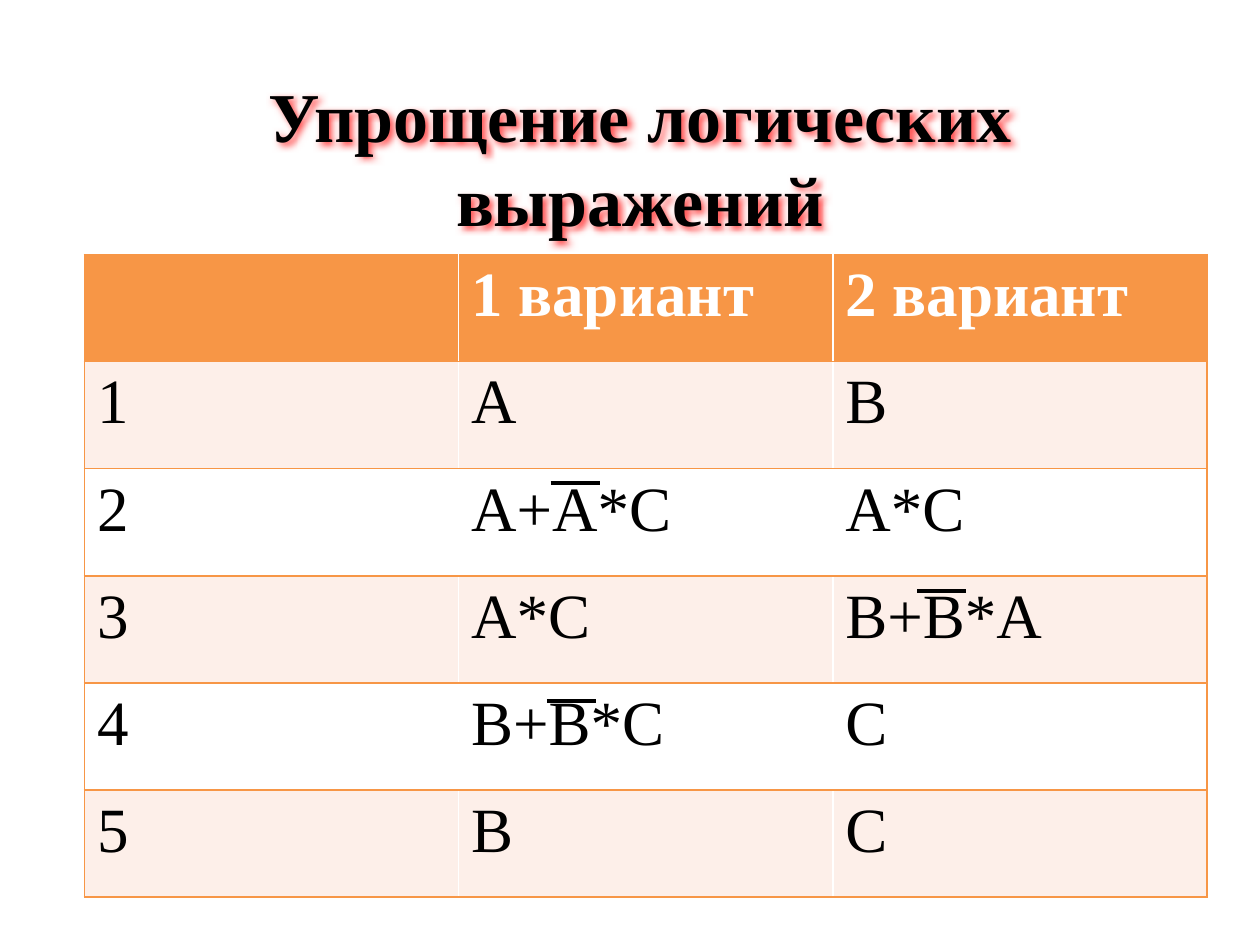
from lxml import etree
from pptx import Presentation
from pptx.dml.color import RGBColor
from pptx.enum.shapes import MSO_CONNECTOR
from pptx.enum.text import MSO_ANCHOR, PP_ALIGN
from pptx.oxml.ns import qn
from pptx.util import Inches, Pt

STRAIGHT = MSO_CONNECTOR.STRAIGHT
MIDDLE = MSO_ANCHOR.MIDDLE
CENTER = PP_ALIGN.CENTER

BLACK = RGBColor(0x00, 0x00, 0x00)
WHITE = RGBColor(0xFF, 0xFF, 0xFF)
ORANGE = RGBColor(0xF7, 0x96, 0x46)
PALE_ORANGE = RGBColor(0xFD, 0xEF, 0xE9)
SHADOW_RED = RGBColor(0xFF, 0x50, 0x50)
FONT = "Times New Roman"

ROWS = [
    ("", "1 вариант", "2 вариант"),
    ("1", "А", "В"),
    ("2", "А+А*С", "А*С"),
    ("3", "А*С", "В+В*А"),
    ("4", "В+В*С", "С"),
    ("5", "В", "С"),
]
COLUMN_WIDTH = 2.97
ROW_HEIGHT = 0.85
# Left end and height of each negation bar
NEGATION_BARS = [(4.37, 3.83), (4.34, 5.56), (7.28, 4.69)]
BAR_LENGTH = 0.39


def format_runs(paragraph, size, color, bold):
    for run in paragraph.runs:
        run.font.name = FONT
        run.font.size = Pt(size)
        run.font.bold = bold
        run.font.color.rgb = color


def add_color(parent, color):
    fill = etree.SubElement(parent, qn("a:solidFill"))
    return etree.SubElement(fill, qn("a:srgbClr"), val=str(color))


def add_title(slide, text):
    title = slide.shapes.add_textbox(
        Inches(0.83), Inches(0.44), Inches(8.5), Inches(1.61))
    frame = title.text_frame
    frame.word_wrap = True
    frame.vertical_anchor = MIDDLE
    frame.text = text
    frame.paragraphs[0].alignment = CENTER
    format_runs(frame.paragraphs[0], 40, BLACK, True)

    # Soft red shadow behind the letters
    effects = etree.SubElement(title._element.spPr, qn("a:effectLst"))
    shadow = etree.SubElement(
        effects, qn("a:outerShdw"), blurRad=str(Pt(4)), dist=str(Pt(2)),
        dir="2700000", algn="tl", rotWithShape="0")
    etree.SubElement(shadow, qn("a:srgbClr"), val=str(SHADOW_RED))


def add_border(cell, side):
    properties = cell._tc.get_or_add_tcPr()
    line = etree.SubElement(properties, qn(f"a:ln{side}"), w=str(Pt(1)))
    add_color(line, ORANGE)


def add_answer_table(slide):
    row_count, column_count = len(ROWS), len(ROWS[0])
    table = slide.shapes.add_table(
        row_count, column_count, Inches(0.67), Inches(2.02),
        Inches(COLUMN_WIDTH * column_count),
        Inches(ROW_HEIGHT * row_count)).table
    for column in table.columns:
        column.width = Inches(COLUMN_WIDTH)
    for row_index, texts in enumerate(ROWS):
        table.rows[row_index].height = Inches(ROW_HEIGHT)
        is_header = row_index == 0
        band = PALE_ORANGE if row_index % 2 else WHITE
        for column_index, text in enumerate(texts):
            cell = table.cell(row_index, column_index)
            # Outer edges and row rules only, without inner verticals
            if column_index == 0:
                add_border(cell, "L")
            if column_index == column_count - 1:
                add_border(cell, "R")
            add_border(cell, "T")
            add_border(cell, "B")
            cell.fill.solid()
            cell.fill.fore_color.rgb = ORANGE if is_header else band
            cell.text = text
            format_runs(cell.text_frame.paragraphs[0], 36,
                        WHITE if is_header else BLACK, is_header)


def add_negation_bar(slide, left, top):
    bar = slide.shapes.add_connector(
        STRAIGHT, Inches(left), Inches(top),
        Inches(left + BAR_LENGTH), Inches(top))
    bar.line.color.rgb = BLACK
    bar.line.width = Pt(2.25)
    etree.SubElement(bar._element.spPr, qn("a:effectLst"))


def main():
    presentation = Presentation()
    presentation.slide_width = Inches(10)
    presentation.slide_height = Inches(7.5)
    slide = presentation.slides.add_slide(presentation.slide_layouts[6])
    add_title(slide, "Упрощение логических выражений")
    add_answer_table(slide)
    for left, top in NEGATION_BARS:
        add_negation_bar(slide, left, top)
    presentation.save("out.pptx")


if __name__ == "__main__":
    main()
